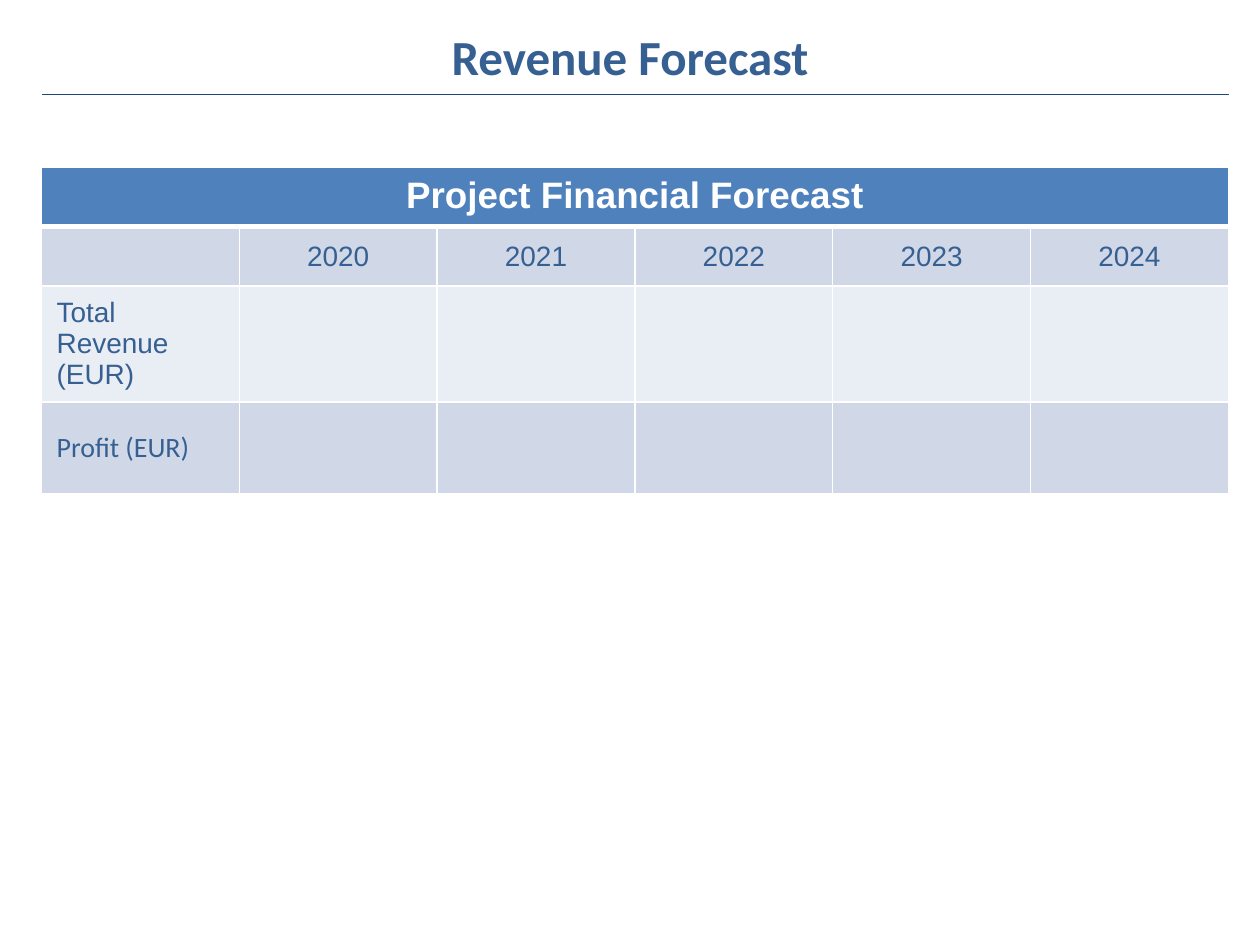
from dataclasses import dataclass

from lxml.etree import SubElement
from pptx import Presentation
from pptx.dml.color import RGBColor
from pptx.enum.shapes import MSO_CONNECTOR
from pptx.enum.text import MSO_ANCHOR, PP_ALIGN
from pptx.oxml.ns import qn
from pptx.table import _Cell as Cell
from pptx.text.text import _Paragraph as Paragraph
from pptx.util import Inches, Pt

WHITE = RGBColor(0xFF, 0xFF, 0xFF)
TEXT_BLUE = RGBColor(0x37, 0x60, 0x92)
RULE_BLUE = RGBColor(0x1F, 0x49, 0x7D)
HEADER_BLUE = RGBColor(0x4F, 0x81, 0xBD)
BAND_DARK = RGBColor(0xD0, 0xD8, 0xE8)
BAND_LIGHT = RGBColor(0xE9, 0xED, 0xF4)

LEFT, WIDTH = 0.33, 9.42
YEARS = ["2020", "2021", "2022", "2023", "2024"]
COLUMNS = len(YEARS) + 1


@dataclass
class TextStyle:
    size: float
    font: str = "Arial"
    color: RGBColor = TEXT_BLUE
    bold: bool = False
    align: PP_ALIGN = PP_ALIGN.LEFT


@dataclass
class ForecastRow:
    texts: list[str]
    height: float
    fill: RGBColor
    style: TextStyle
    anchor: MSO_ANCHOR = MSO_ANCHOR.MIDDLE
    top_border: float = 1
    bottom_border: float = 1


ROWS = [
    ForecastRow(["Project Financial Forecast"], 0.47, HEADER_BLUE,
                TextStyle(21, color=WHITE, bold=True, align=PP_ALIGN.CENTER),
                anchor=MSO_ANCHOR.TOP, bottom_border=3),
    ForecastRow(["", *YEARS], 0.47, BAND_DARK,
                TextStyle(16, align=PP_ALIGN.CENTER), top_border=3),
    ForecastRow(["Total Revenue (EUR)"], 0.67, BAND_LIGHT, TextStyle(16)),
    ForecastRow(["Profit (EUR)"], 0.73, BAND_DARK, TextStyle(16, "Calibri")),
]


def write(paragraph: Paragraph, text: str, style: TextStyle) -> None:
    paragraph.text = text
    paragraph.alignment = style.align
    font = paragraph.font
    font.name, font.size, font.bold = style.font, Pt(style.size), style.bold
    font.color.rgb = style.color


def set_borders(cell: Cell, top: float, bottom: float) -> None:
    """Draw white borders; must run before the cell gets its fill."""
    properties = cell._tc.get_or_add_tcPr()
    for side, points in (("L", 1), ("R", 1), ("T", top), ("B", bottom)):
        border = SubElement(properties, qn(f"a:ln{side}"), w=str(Pt(points)))
        fill = SubElement(border, qn("a:solidFill"))
        SubElement(fill, qn("a:srgbClr"), val=str(WHITE))


def add_title(slide) -> None:
    frame = slide.shapes.add_textbox(
        Inches(0.5), Inches(0.13), Inches(9), Inches(0.62)).text_frame
    frame.word_wrap = True
    frame.vertical_anchor = MSO_ANCHOR.MIDDLE
    write(frame.paragraphs[0], "Revenue Forecast",
          TextStyle(28, "Calibri", bold=True, align=PP_ALIGN.CENTER))


def add_title_rule(slide) -> None:
    rule = slide.shapes.add_connector(
        MSO_CONNECTOR.STRAIGHT, Inches(LEFT), Inches(0.75),
        Inches(LEFT + WIDTH), Inches(0.75))
    rule.line.color.rgb = RULE_BLUE
    rule.line.width = Pt(1)
    SubElement(rule._element.spPr, qn("a:effectLst"))


def add_forecast(slide) -> None:
    table = slide.shapes.add_table(
        len(ROWS), COLUMNS, Inches(LEFT), Inches(1.33), Inches(WIDTH),
        Inches(sum(row.height for row in ROWS))).table
    for table_row, row in zip(table.rows, ROWS):
        table_row.height = Inches(row.height)
        for index, cell in enumerate(table_row.cells):
            set_borders(cell, row.top_border, row.bottom_border)
            cell.fill.solid()
            cell.fill.fore_color.rgb = row.fill
            cell.margin_left = cell.margin_right = Inches(0.12)
            cell.margin_top = cell.margin_bottom = Inches(0.06)
            cell.vertical_anchor = row.anchor
            if index < len(row.texts) and row.texts[index]:
                write(cell.text_frame.paragraphs[0], row.texts[index], row.style)
    table.cell(0, 0).merge(table.cell(0, COLUMNS - 1))


def main() -> None:
    presentation = Presentation()
    presentation.slide_width = Inches(10)
    presentation.slide_height = Inches(7.5)
    slide = presentation.slides.add_slide(presentation.slide_layouts[6])
    add_title(slide)
    add_title_rule(slide)
    add_forecast(slide)
    presentation.save("out.pptx")


if __name__ == "__main__":
    main()
